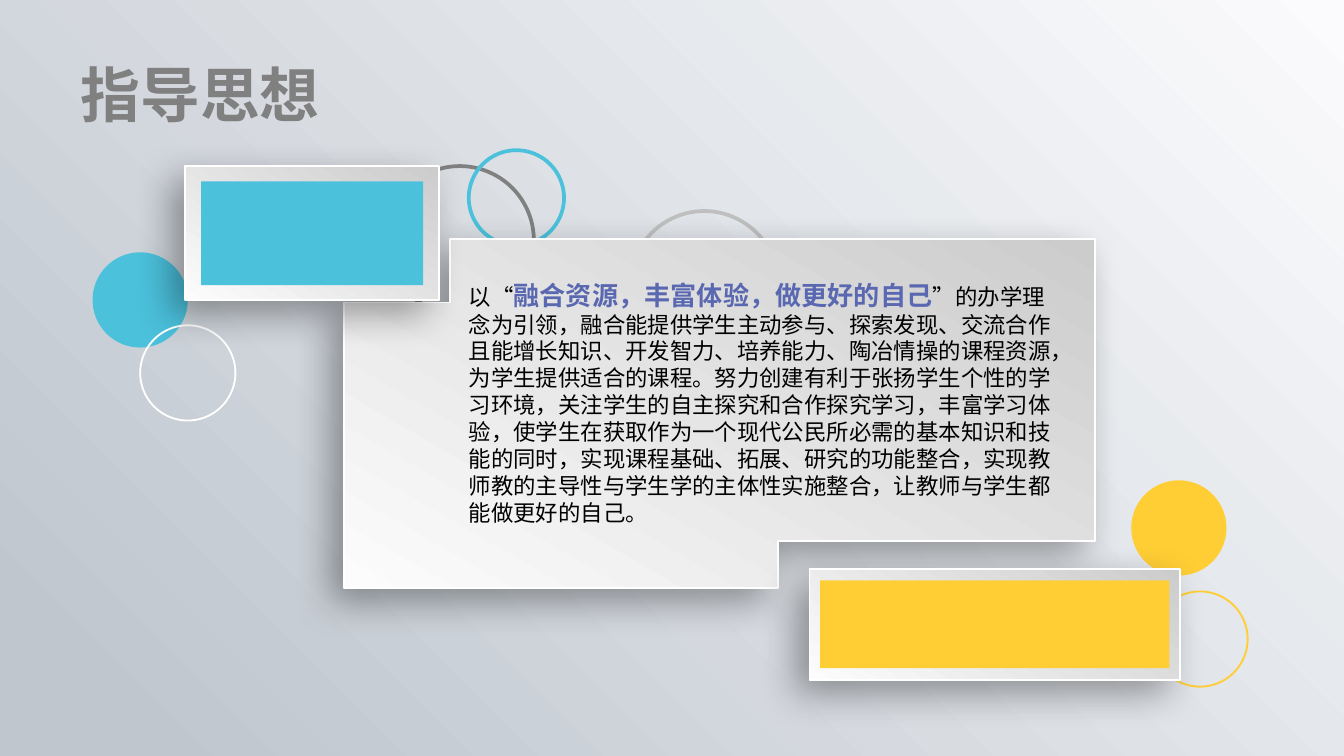
import pptx
import pptx.util
import pptx.dml.color
import pptx.enum.shapes
import pptx.enum.text
import pptx.oxml
import pptx.oxml.ns
from pptx.util import Cm

COLORS = {
    "cyan": "4BC1DC",
    "yellow": "FFCE35",
    "grey": "808080",
    "silver": "BFBFBF",
    "white": "FFFFFF",
    "black": "000000",
    "indigo": "5968B0",
    "panel_dark": "CCCCCC",
    "panel_light": "FCFCFC",
    "back_dark": "BFC6CE",
    "back_light": "FBFBFD",
}
RECTANGLE = pptx.enum.shapes.MSO_SHAPE.RECTANGLE
OVAL = pptx.enum.shapes.MSO_SHAPE.OVAL
CIRCLE = 1.8
BIG_CIRCLE = 2.8


def rgb(name):
    return pptx.dml.color.RGBColor.from_string(COLORS[name])


def shade(fill, start, end, angle, first=0):
    fill.gradient()
    fill.gradient_angle = angle
    for stop, name, position in zip(fill.gradient_stops, (start, end), (first, 1)):
        stop.color.rgb = rgb(name)
        stop.position = position


def style(shape, fill=None, line=None, width=1):
    shape.shadow.inherit = False
    if fill:
        shape.fill.solid()
        shape.fill.fore_color.rgb = rgb(fill)
    else:
        shape.fill.background()
    if line:
        shape.line.color.rgb = rgb(line)
        shape.line.width = pptx.util.Pt(width)
    else:
        shape.line.fill.background()


def raise_panel(panel):
    style(panel, line="white")
    shade(panel.fill, "panel_dark", "panel_light", 240)
    effects = panel._element.spPr.find(pptx.oxml.ns.qn("a:effectLst"))
    effects.append(pptx.oxml.parse_xml(
        f'<a:outerShdw {pptx.oxml.ns.nsdecls("a")} blurRad="254000" dist="127000" '
        'dir="8160000" algn="tr" rotWithShape="0"><a:srgbClr val="000000">'
        '<a:alpha val="34000"/></a:srgbClr></a:outerShdw>'))


def add_circle(slide, left, top, size, fill=None, line=None, width=1):
    circle = slide.shapes.add_shape(OVAL, Cm(left), Cm(top), Cm(size), Cm(size))
    style(circle, fill, line, width)


def add_title(slide, left, top, width, height):
    title = slide.shapes.title
    title.left, title.top, title.width, title.height = map(Cm, (left, top, width, height))
    frame = title.text_frame
    frame.text = "指导思想"
    frame.vertical_anchor = pptx.enum.text.MSO_ANCHOR.MIDDLE
    heading = frame.paragraphs[0]
    heading.alignment = pptx.enum.text.PP_ALIGN.LEFT
    font = heading.runs[0].font
    font.name, font.size, font.bold = "Arial", pptx.util.Pt(32), True
    font.color.rgb = rgb("grey")


def add_circles(slide, left, top):
    for x, y, size, fill, line, width in (
        (10.16, 1.15, BIG_CIRCLE, None, "silver", 2),
        (5.54, 0.3, BIG_CIRCLE, None, "grey", 2),
        (7.11, 0, CIRCLE, None, "cyan", 2),
        (0, 1.93, CIRCLE, "cyan", None, 1),
        (0.9, 3.31, CIRCLE, None, "white", 1),
        (19.63, 6.24, CIRCLE, "yellow", None, 1),
        (20.03, 8.34, CIRCLE, None, "yellow", 1),
    ):
        add_circle(slide, left + x, top + y, size, fill, line, width)


def add_stepped_panel(slide, left, top, width, height):
    notch_x, notch_y = left + 2, top + 1.2
    step_x, step_y = left + 8.2, top + height - 0.9
    right, bottom = left + width, top + height
    outline = slide.shapes.build_freeform(Cm(notch_x), Cm(top))
    outline.add_line_segments([(Cm(x), Cm(y)) for x, y in (
        (right, top), (right, step_y), (step_x, step_y), (step_x, bottom),
        (left, bottom), (left, notch_y), (notch_x, notch_y),
    )])
    raise_panel(outline.convert_to_shape())


def add_framed_block(slide, left, top, width, height, inset_x, inset_y, color):
    frame = slide.shapes.add_shape(RECTANGLE, Cm(left), Cm(top), Cm(width), Cm(height))
    raise_panel(frame)
    block = slide.shapes.add_shape(
        RECTANGLE, Cm(left + inset_x), Cm(top + inset_y),
        Cm(width - 2 * inset_x), Cm(height - 2 * inset_y))
    style(block, color)


def add_statement(slide, left, top, width, height):
    statement = slide.shapes.add_textbox(Cm(left), Cm(top), Cm(width), Cm(height))
    frame = statement.text_frame
    frame.word_wrap = True
    frame.margin_top = frame.margin_bottom = 0
    paragraph = frame.paragraphs[0]
    for words, size, color, bold in (
        ("以“", 12, "black", False),
        ("融合资源，丰富体验，做更好的自己", 14, "indigo", True),
        ("”的办学理念为引领，融合能提供学生主动参与、探索发现、交流合作"
         "且能增长知识、开发智力、培养能力、陶冶情操的课程资源，"
         "为学生提供适合的课程。努力创建有利于张扬学生个性的学习环境，"
         "关注学生的自主探究和合作探究学习，丰富学习体验，"
         "使学生在获取作为一个现代公民所必需的基本知识和技能的同时，"
         "实现课程基础、拓展、研究的功能整合，"
         "实现教师教的主导性与学生学的主体性实施整合，"
         "让教师与学生都能做更好的自己。", 12, "black", False),
    ):
        run = paragraph.add_run()
        run.text = words
        run.font.name, run.font.size, run.font.bold = "Calibri", pptx.util.Pt(size), bold
        run.font.color.rgb = rgb(color)


def main():
    deck = pptx.Presentation()
    deck.slide_width, deck.slide_height = Cm(25.4), Cm(14.29)
    slide = deck.slides.add_slide(deck.slide_layouts[5])
    shade(slide.background.fill, "back_dark", "back_light", 45, 0.07)
    add_title(slide, 1.27, 0.58, 22.86, 2.39)
    add_circles(slide, 1.75, 2.84)
    add_stepped_panel(slide, 6.5, 4.52, 14.2, 6.6)
    add_framed_block(slide, 3.5, 3.14, 4.8, 2.54, 0.3, 0.29, "cyan")
    add_framed_block(slide, 15.3, 10.75, 7, 2.1, 0.2, 0.22, "yellow")
    add_statement(slide, 8.61, 5.28, 11.76, 5.21)
    deck.save("out.pptx")


if __name__ == "__main__":
    main()
